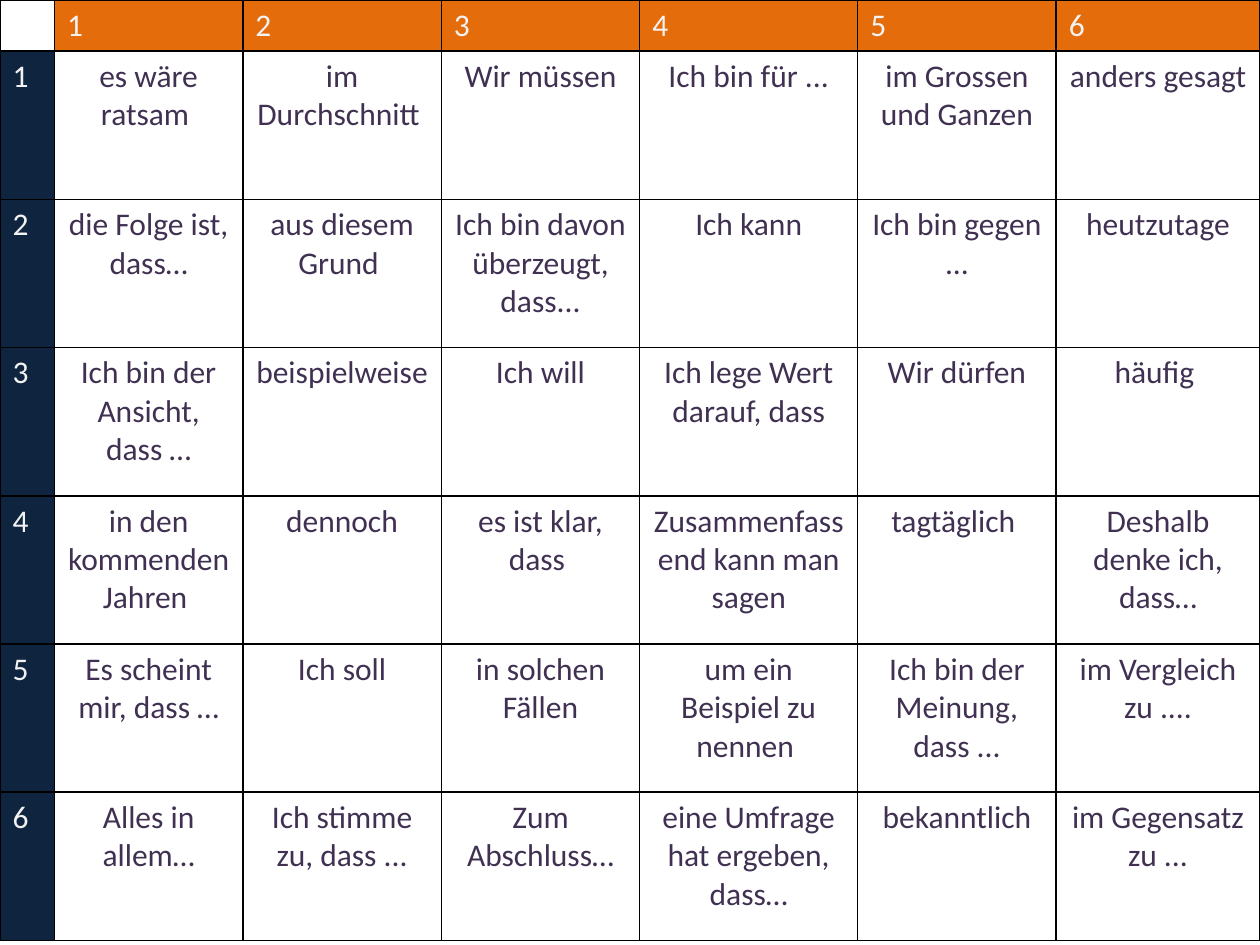
"""Builds a slide with a six by six dice table of German discussion phrases."""
import dataclasses

import lxml.etree
import pptx
import pptx.dml.color
import pptx.enum.text
import pptx.oxml.ns
import pptx.util


@dataclasses.dataclass(frozen=True)
class Theme:
    font: str = "Calibri"
    size: float = 18
    border_width: float = 1
    border: str = "000000"
    column_fill: str = "E46C0A"
    row_fill: str = "0F243E"
    number: str = "F2F2F2"
    phrase: str = "403152"


theme = Theme()
Pt = pptx.util.Pt
rgb = pptx.dml.color.RGBColor.from_string

phrases = [
    ["es wäre ratsam ", "im Durchschnitt ", "Wir müssen",
     "Ich bin für ...", "im Grossen und Ganzen", "anders gesagt "],
    ["die Folge ist, dass…", "aus diesem Grund ", "Ich bin davon überzeugt, dass...",
     "Ich kann", "Ich bin gegen ...", "heutzutage"],
    ["Ich bin der Ansicht, dass …", "beispielweise ", "Ich will",
     "Ich lege Wert darauf, dass", "Wir dürfen", "häufig "],
    ["in den kommenden Jahren ", "dennoch", "es ist klar, dass ",
     "Zusammenfassend kann man sagen", "tagtäglich ", "Deshalb denke ich, dass…"],
    ["Es scheint mir, dass …", "Ich soll", "in solchen Fällen",
     "um ein Beispiel zu nennen ", "Ich bin der Meinung, dass ...", "im Vergleich zu ...."],
    ["Alles in allem…", "Ich stimme zu, dass ...", "Zum Abschluss…",
     "eine Umfrage hat ergeben, dass…", "bekanntlich", "im Gegensatz zu ..."],
]
column_numbers = ["", "1", "2", "3", "4", "5", "6"]
dice_rows = [column_numbers] + [[str(n), *row] for n, row in enumerate(phrases, 1)]
column_widths = [31.1, 107.7, 113.4, 113.4, 124.6, 113.4, 116.4]
row_heights = [29.2] + [84.7] * len(phrases)


def add_borders(cell):
    properties = cell._tc.get_or_add_tcPr()
    for position, side in enumerate(("a:lnL", "a:lnR", "a:lnT", "a:lnB")):
        line = lxml.etree.Element(pptx.oxml.ns.qn(side), w=str(Pt(theme.border_width)))
        fill = lxml.etree.SubElement(line, pptx.oxml.ns.qn("a:solidFill"))
        lxml.etree.SubElement(fill, pptx.oxml.ns.qn("a:srgbClr"), val=theme.border)
        properties.insert(position, line)


presentation = pptx.Presentation()
presentation.slide_width = Pt(720)
presentation.slide_height = Pt(540)
slide = presentation.slides.add_slide(presentation.slide_layouts[6])

dice_table = slide.shapes.add_table(
    len(dice_rows), len(column_widths), Pt(0), Pt(0),
    Pt(sum(column_widths)), Pt(sum(row_heights)),
).table
dice_table.horz_banding = False
dice_table.first_row = False
for column, width in zip(dice_table.columns, column_widths):
    column.width = Pt(width)
for row, height in zip(dice_table.rows, row_heights):
    row.height = Pt(height)

for row_index, dice_row in enumerate(dice_rows):
    for column_index, wording in enumerate(dice_row):
        cell = dice_table.cell(row_index, column_index)
        is_number = row_index == 0 or column_index == 0
        if is_number and wording:
            cell.fill.solid()
            cell.fill.fore_color.rgb = rgb(theme.row_fill if row_index else theme.column_fill)
        else:
            cell.fill.background()
        add_borders(cell)
        if not wording:
            continue
        paragraph = cell.text_frame.paragraphs[0]
        if not is_number:
            paragraph.alignment = pptx.enum.text.PP_ALIGN.CENTER
        run = paragraph.add_run()
        run.text = wording
        run.font.name = theme.font
        run.font.size = Pt(theme.size)
        run.font.color.rgb = rgb(theme.number if is_number else theme.phrase)

presentation.save("out.pptx")
